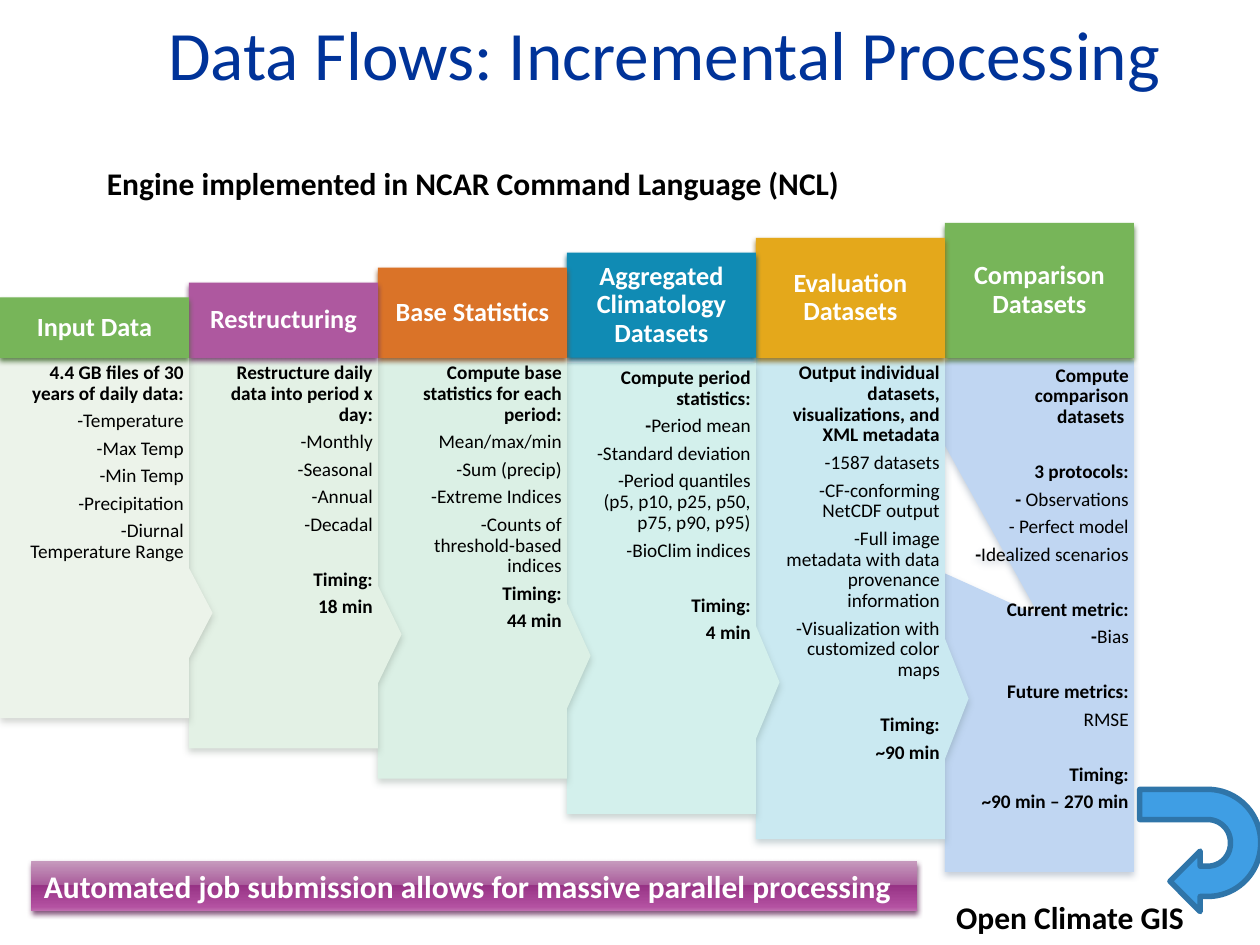
from lxml.etree import SubElement
from pptx import Presentation
from pptx.dml.color import RGBColor
from pptx.enum.shapes import MSO_SHAPE as Preset
from pptx.enum.text import MSO_ANCHOR as Anchor, MSO_AUTO_SIZE as AutoSize, PP_ALIGN as Align
from pptx.oxml.ns import qn
from pptx.util import Inches, Pt

FONT = "Calibri"
WHITE = RGBColor(0xFF, 0xFF, 0xFF)
BLACK = RGBColor(0x00, 0x00, 0x00)
NAVY = RGBColor(0x00, 0x33, 0x99)
GREEN = RGBColor(0x77, 0xB5, 0x59)
GREEN_SHADE = RGBColor(0x49, 0x70, 0x37)
PURPLE = RGBColor(0xAE, 0x58, 0x9F)
PURPLE_SHADE = RGBColor(0x6B, 0x36, 0x62)
ORANGE = RGBColor(0xDA, 0x73, 0x28)
ORANGE_SHADE = RGBColor(0x87, 0x47, 0x19)
TEAL = RGBColor(0x10, 0x8B, 0xB4)
TEAL_SHADE = RGBColor(0x0A, 0x56, 0x6F)
AMBER = RGBColor(0xE4, 0xA8, 0x1B)
AMBER_SHADE = RGBColor(0x8D, 0x68, 0x11)
ARROW_BLUE = RGBColor(0x3F, 0x9E, 0xE4)
ARROW_EDGE = RGBColor(0x2F, 0x75, 0xA9)
BANNER_STOPS = [
    (0, RGBColor(0xC7, 0x9C, 0xBE)), (49, RGBColor(0xA9, 0x5C, 0x9B)),
    (49, RGBColor(0x97, 0x33, 0x85)), (92, RGBColor(0xB3, 0x51, 0xA1)),
    (100, RGBColor(0xBF, 0x6E, 0xAF)),
]

# Column geometry in inches: headers grow upwards, bodies grow downwards
PITCH = 1.5
HEADER_BOTTOM = 2.84
HEADER_HEIGHT, HEADER_GROWTH = 0.48, 0.59 / 5
BODY_HEIGHT, BODY_GROWTH = 2.86, 0.24
POINTER = (0.625, 0.208)
NO_POINTER = (0, 0)

# Heading, header fill and shade, body fill and shade, body top, pointer, lines.
# In a line, the part before "|" is bold; a leading "^" opens a gap above it.
STAGES = [
    ("Input Data", GREEN, GREEN_SHADE,
     RGBColor(0xEC, 0xF3, 0xEA), RGBColor(0x8B, 0x91, 0x89), 2.84, POINTER,
     ["4.4 GB files of 30 years of daily data:|", "-Temperature", "-Max Temp",
      "-Min Temp", "-Precipitation", "-Diurnal Temperature Range"]),
    ("Restructuring", PURPLE, PURPLE_SHADE,
     RGBColor(0xE3, 0xF1, 0xE5), RGBColor(0x84, 0x91, 0x86), 2.84, POINTER,
     ["Restructure daily data into period x day:|", "-Monthly", "-Seasonal",
      "-Annual", "-Decadal", "^Timing:|", "18 min|"]),
    ("Base Statistics", ORANGE, ORANGE_SHADE,
     RGBColor(0xDB, 0xF0, 0xE5), RGBColor(0x7F, 0x92, 0x88), 2.84, POINTER,
     ["Compute base statistics for each period:|", "Mean/max/min", "-Sum (precip)",
      "-Extreme Indices", "-Counts of threshold-based indices", "Timing:|", "44 min|"]),
    ("Aggregated Climatology Datasets", TEAL, TEAL_SHADE,
     RGBColor(0xD3, 0xF0, 0xEC), RGBColor(0x78, 0x93, 0x8F), 2.88, POINTER,
     ["Compute period statistics:|", "-|Period mean", "-Standard deviation",
      "-Period quantiles (p5, p10, p25, p50, p75, p90, p95)", "-BioClim indices",
      "^Timing:|", "4 min|"]),
    ("Evaluation Datasets", AMBER, AMBER_SHADE,
     RGBColor(0xCA, 0xE9, 0xF1), RGBColor(0x72, 0x8D, 0x94), 2.84, POINTER,
     ["Output individual datasets, visualizations, and XML metadata|",
      "-1587 datasets", "-CF-conforming NetCDF output",
      "-Full image metadata with data provenance information",
      "-Visualization with customized color maps", "^Timing:|", "~90 min|"]),
    ("Comparison Datasets", GREEN, GREEN_SHADE,
     RGBColor(0xC0, 0xD6, 0xF2), RGBColor(0x6A, 0x7E, 0x97), 2.86, NO_POINTER,
     ["Compute comparison datasets |", "^3 protocols:|", "-| Observations",
      "- Perfect model", "-|Idealized scenarios", "^Current metric:|", "-|Bias",
      "^Future metrics:|", "RMSE", "^Timing:|", "~90 min – 270 min|"]),
]


def write_text(holder, lines, size=18, color=BLACK, align=Align.LEFT, anchor=Anchor.TOP,
               insets=None, wrap=True, fit=AutoSize.NONE, spacing=None, after=0, gap=0):
    """Fill a shape with lines, using the bold and gap marks described above."""
    frame = holder.text_frame
    frame.word_wrap, frame.auto_size, frame.vertical_anchor = wrap, fit, anchor
    if insets:
        (frame.margin_left, frame.margin_top,
         frame.margin_right, frame.margin_bottom) = map(Inches, insets)
    for index, line in enumerate(lines):
        paragraph = frame.add_paragraph() if index else frame.paragraphs[0]
        paragraph.alignment, paragraph.line_spacing = align, spacing
        paragraph.space_after = Pt(after)
        paragraph.space_before = Pt(gap if line.startswith("^") else 0)
        strong, mark, plain = line.removeprefix("^").partition("|")
        for words, bold in [(strong, bool(mark)), (plain, False)]:
            if words:
                run = paragraph.add_run()
                run.text = words
                run.font.name, run.font.size, run.font.bold = FONT, Pt(size), bold
                run.font.color.rgb = color


def add_block(slide, preset, box, fill=None):
    """Add a preset shape with a flat fill, no outline and no shadow."""
    block = slide.shapes.add_shape(preset, *map(Inches, box))
    if fill is not None:
        block.fill.solid()
        block.fill.fore_color.rgb = fill
    block.line.fill.background()
    block.shadow.inherit = False
    return block


def add_shadow(block, color, opacity, blur):
    """Cast a soft shadow straight down."""
    effects = block._element.spPr.find(qn("a:effectLst"))
    shadow = SubElement(effects, qn("a:outerShdw"), blurRad=str(Pt(blur)), dist=str(Pt(2)),
                        dir="5400000", algn="ctr", rotWithShape="0")
    tint = SubElement(shadow, qn("a:srgbClr"), val=str(color))
    SubElement(tint, qn("a:alpha"), val=str(opacity * 1000))


def fill_gradient(block, stops):
    """Run a gradient from top to bottom through all stops."""
    block.fill.gradient()
    block.fill.gradient_angle = 270
    stop_list = block._element.spPr.find(qn("a:gradFill")).find(qn("a:gsLst"))
    for old_stop in list(stop_list):
        stop_list.remove(old_stop)
    for position, color in stops:
        stop = SubElement(stop_list, qn("a:gs"), pos=str(position * 1000))
        SubElement(stop, qn("a:srgbClr"), val=str(color))


def add_stage(slide, index, stage):
    """Add one column: the body callout, then its header."""
    heading, fill, shade, body_fill, body_shade, body_top, pointer, lines = stage
    left = index * PITCH
    body = add_block(slide, Preset.RECTANGULAR_CALLOUT,
                     (left, body_top, PITCH, BODY_HEIGHT + index * BODY_GROWTH), body_fill)
    body.adjustments[0], body.adjustments[1] = pointer
    add_shadow(body, body_shade, opacity=38, blur=4)
    write_text(body, lines, size=11, align=Align.RIGHT, insets=(0.23, 0.04, 0.04, 0.04),
               spacing=0.9, after=3.85, gap=15.7)

    height = HEADER_HEIGHT + index * HEADER_GROWTH
    header = add_block(slide, Preset.RECTANGLE,
                       (left, HEADER_BOTTOM - height, PITCH, height), fill)
    add_shadow(header, shade, opacity=83, blur=3.1)
    write_text(header, [heading + "|"], size=15, color=WHITE, align=Align.CENTER,
               anchor=Anchor.MIDDLE, insets=(0.05,) * 4, spacing=0.9)


def add_label(slide, box, words):
    label = slide.shapes.add_textbox(*map(Inches, box))
    write_text(label, [words + "|"], wrap=False, fit=AutoSize.SHAPE_TO_FIT_TEXT)


def add_title(slide, words):
    title = slide.shapes.title
    title.left, title.top, title.width, title.height = map(Inches, (1.17, 0, 8.33, 0.83))
    title.fill.solid()
    title.fill.fore_color.rgb = WHITE
    write_text(title, [words], size=39.6, color=NAVY, align=Align.CENTER, anchor=Anchor.MIDDLE)


def main():
    deck = Presentation()
    deck.slide_width, deck.slide_height = Inches(10), Inches(7.5)
    slide = deck.slides.add_slide(deck.slide_layouts[5])
    add_title(slide, "Data Flows: Incremental Processing ")

    # Stages run right to left so each pointer overlaps the next column
    for index, stage in reversed(list(enumerate(STAGES))):
        add_stage(slide, index, stage)

    # Banner below the columns
    banner = add_block(slide, Preset.RECTANGLE, (0.25, 6.83, 7.03, 0.4))
    fill_gradient(banner, BANNER_STOPS)
    add_shadow(banner, PURPLE_SHADE, opacity=83, blur=3.1)
    write_text(banner, ["Automated job submission allows for massive parallel processing|"],
               color=WHITE, wrap=False, fit=AutoSize.SHAPE_TO_FIT_TEXT)

    # Destination with its turning arrow, and the engine note
    add_label(slide, (7.49, 7.08, 2.03, 0.4), "Open Climate GIS")
    turn = add_block(slide, Preset.U_TURN_ARROW, (9.04, 6.27, 0.97, 0.96), ARROW_BLUE)
    turn.rotation = 90
    turn.line.color.rgb = ARROW_EDGE
    turn.line.width = Pt(3.15)
    add_label(slide, (0.75, 1.25, 6.06, 0.4), "Engine implemented in NCAR Command Language (NCL)")

    deck.save("out.pptx")


if __name__ == "__main__":
    main()
